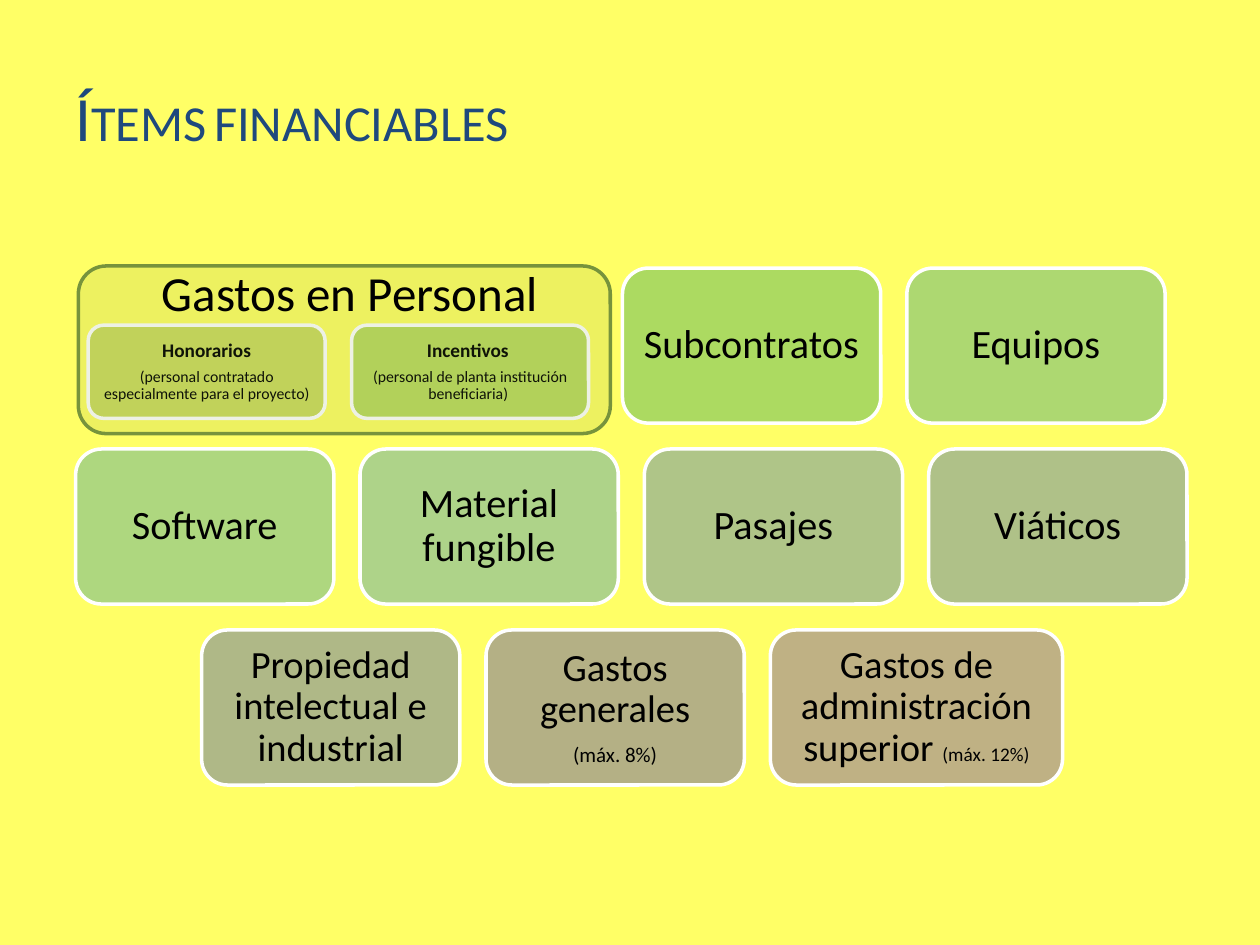
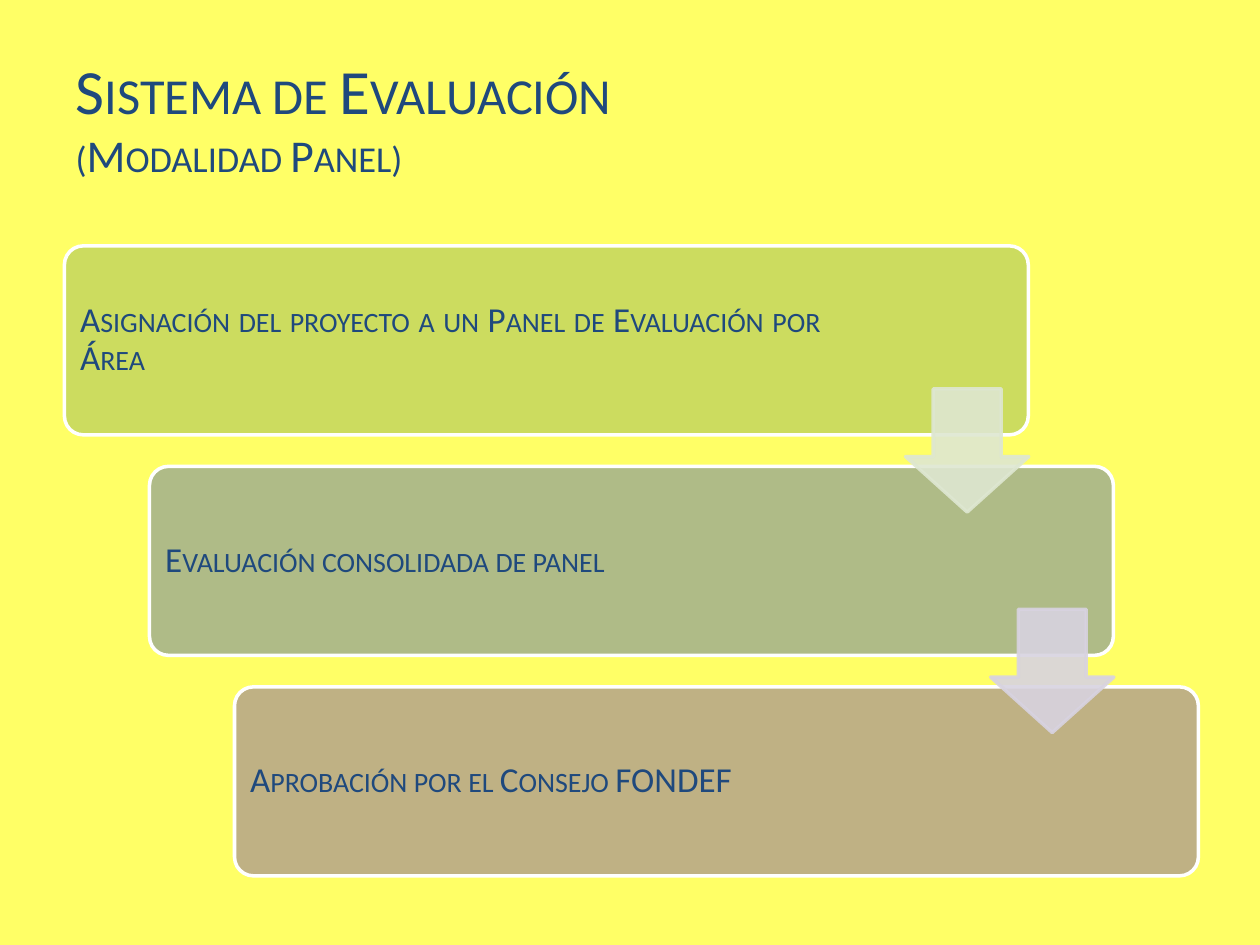
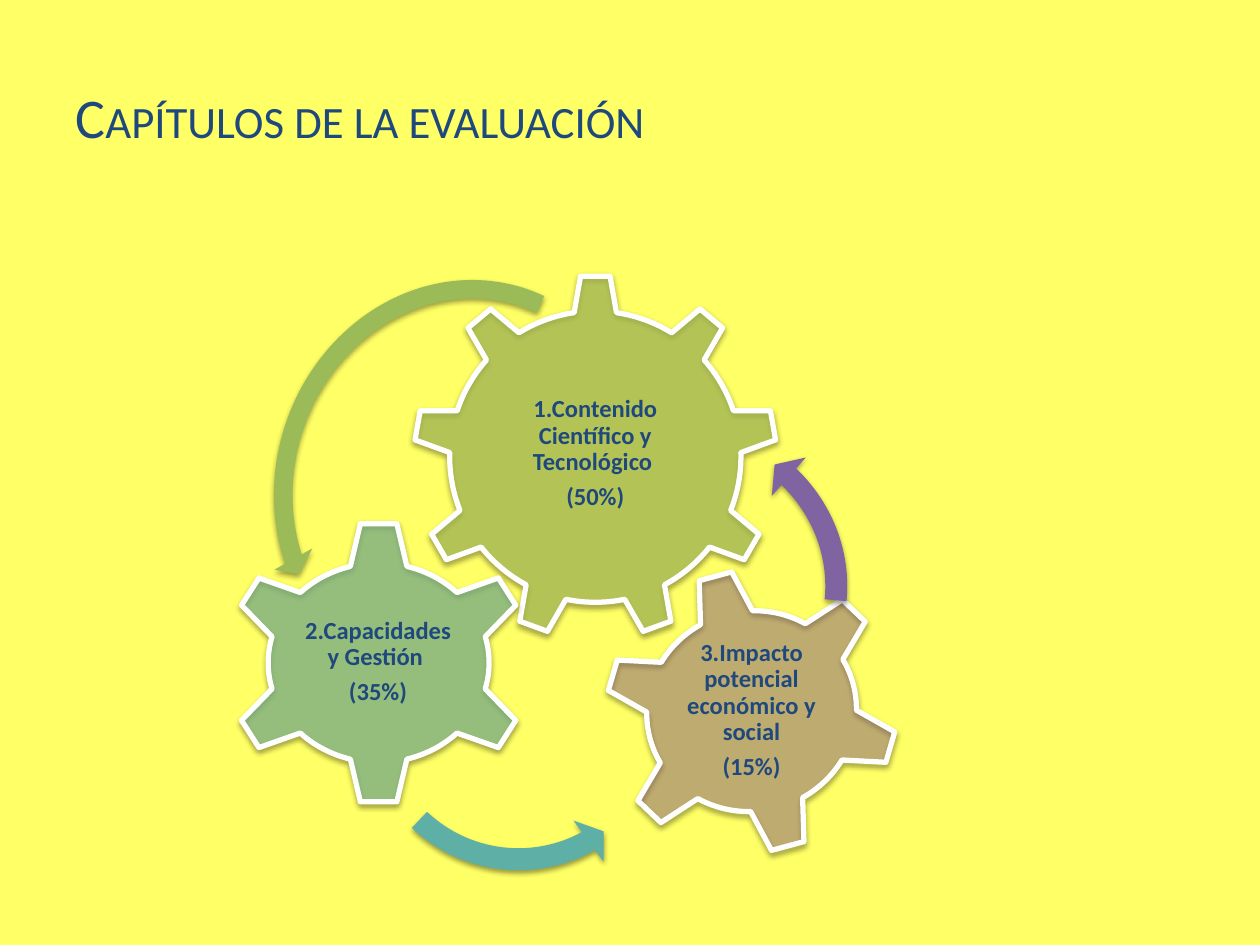
"""Build three slides on project funding items and evaluation."""
from dataclasses import dataclass
from typing import Optional

from lxml import etree
from pptx import Presentation
from pptx.dml.color import RGBColor
from pptx.enum import shapes, text
from pptx.oxml.ns import qn
from pptx.util import Pt

KIND = shapes.MSO_SHAPE
ALIGN = text.PP_ALIGN
ANCHOR = text.MSO_ANCHOR

YELLOW = RGBColor(0xFF, 0xFF, 0x66)
NAVY = RGBColor(0x1F, 0x49, 0x7D)
BLACK = RGBColor(0, 0, 0)
WHITE = RGBColor(0xFF, 0xFF, 0xFF)
GREEN = RGBColor(0x9B, 0xBB, 0x59)
LEAF = RGBColor(0x79, 0xB8, 0x5A)
MINT = RGBColor(0x5B, 0xB6, 0x5D)
JADE = RGBColor(0x5C, 0xB3, 0x7C)
SEA = RGBColor(0x5E, 0xB0, 0x99)
LAGOON = RGBColor(0x5F, 0xA8, 0xAD)
SKY = RGBColor(0x60, 0x8C, 0xAB)
STEEL = RGBColor(0x60, 0x84, 0xAA)
SLATE = RGBColor(0x61, 0x79, 0xA8)
INDIGO = RGBColor(0x61, 0x72, 0xA8)
VIOLET = RGBColor(0x6A, 0x63, 0xA5)
PURPLE = RGBColor(0x80, 0x64, 0xA2)
DEEP_PURPLE = RGBColor(0x70, 0x30, 0xA0)
TEAL = RGBColor(0x5E, 0xAF, 0xA6)
OLIVE = RGBColor(0x77, 0x93, 0x3C)
PALE_GREEN = RGBColor(0xDE, 0xE7, 0xD1)
PALE_PURPLE = RGBColor(0xD8, 0xD3, 0xE0)


@dataclass(frozen=True)
class Box:
    """Place and size in points."""
    left: float
    top: float
    width: float
    height: float

    def lengths(self):
        """Give the four values as lengths."""
        return [Pt(v) for v in (self.left, self.top, self.width, self.height)]


@dataclass(frozen=True)
class Figure:
    """A preset shape and its look."""
    kind: KIND
    box: Box
    fill: RGBColor
    opacity: int = 50
    line: Optional[RGBColor] = WHITE
    line_width: float = 2
    line_opacity: int = 100
    rotation: float = 0
    flipped: bool = False
    shadow: bool = False
    adjust: tuple = ()


@dataclass(frozen=True)
class Run:
    """A piece of text with its size."""
    text: str
    size: float
    bold: bool = False


@dataclass(frozen=True)
class Item:
    """A cost item shown as a card."""
    paragraphs: tuple
    fill: RGBColor
    width: float = 147.6


@dataclass(frozen=True)
class Chapter:
    """An evaluation chapter: a gear with its label."""
    gear: Figure
    label_box: Box
    label: str
    weight: str


def add_run(paragraph, words: str, *, size: float, color: RGBColor = BLACK,
            bold: bool = False, small_caps: bool = False, font: str = "Calibri"):
    """Add formatted text to a paragraph."""
    run = paragraph.add_run()
    run.text = words
    run.font.name, run.font.size, run.font.bold = font, Pt(size), bold
    run.font.color.rgb = color
    if small_caps:
        run.font._element.set("cap", "small")


def write(frame, paragraphs, *, insets, align=ALIGN.CENTER, anchor=ANCHOR.MIDDLE,
          line_spacing: float = 0.9, **look):
    """Fill a text frame; each paragraph is a tuple of runs."""
    frame.word_wrap = True
    frame.auto_size = text.MSO_AUTO_SIZE.NONE
    frame.vertical_anchor = anchor
    frame.margin_left, frame.margin_top, frame.margin_right, frame.margin_bottom = map(Pt, insets)
    for index, runs in enumerate(paragraphs):
        paragraph = frame.add_paragraph() if index else frame.paragraphs[0]
        paragraph.alignment = align
        paragraph.line_spacing = line_spacing
        if line_spacing < 1:
            paragraph.space_after = Pt(round(0.35 * runs[0].size, 1))
        for run in runs:
            add_run(paragraph, run.text, size=run.size, bold=run.bold, **look)


def set_opacity(fill_parent, percent: int) -> None:
    """Make a solid fill partly transparent."""
    color = fill_parent.find(qn("a:solidFill")).find(qn("a:srgbClr"))
    etree.SubElement(color, qn("a:alpha"), val=str(percent * 1000))


def add_shadow(shape) -> None:
    """Add a soft shadow just below a shape."""
    effects = shape.element.spPr.find(qn("a:effectLst"))
    shadow = etree.SubElement(effects, qn("a:outerShdw"), blurRad=str(Pt(3.1)),
                              dist=str(Pt(1.6)), dir="5400000", rotWithShape="0")
    color = etree.SubElement(shadow, qn("a:srgbClr"), val=str(BLACK))
    etree.SubElement(color, qn("a:alpha"), val="38000")


def draw(slide, figure: Figure):
    """Draw a figure and return its shape."""
    shape = slide.shapes.add_shape(figure.kind, *figure.box.lengths())
    for index, value in enumerate(figure.adjust):
        shape.adjustments[index] = value
    shape.rotation = figure.rotation
    shape.fill.solid()
    shape.fill.fore_color.rgb = figure.fill
    properties = shape.element.spPr
    if figure.opacity < 100:
        set_opacity(properties, figure.opacity)
    if figure.line is None:
        shape.line.fill.background()
    else:
        shape.line.color.rgb = figure.line
        shape.line.width = Pt(figure.line_width)
        if figure.line_opacity < 100:
            set_opacity(properties.find(qn("a:ln")), figure.line_opacity)
    if figure.flipped:
        properties.xfrm.set("flipH", "1")
    shape.shadow.inherit = False
    if figure.shadow:
        add_shadow(shape)
    return shape


def add_titled_slide(prs, *lines: Run):
    """Add a slide with a small-caps title, one paragraph a line."""
    slide = prs.slides.add_slide(prs.slide_layouts[5])
    title = slide.shapes.title
    title.left, title.top, title.width, title.height = Box(36, 21.6, 562.3, 90).lengths()
    write(title.text_frame, [(line,) for line in lines], insets=(7.2, 3.6, 7.2, 3.6),
          align=ALIGN.LEFT, line_spacing=1.0, color=NAVY, small_caps=True)
    return slide


def add_card(slide, box: Box, fill: RGBColor, paragraphs, inset: float) -> None:
    """Draw a translucent rounded card with centred text."""
    card = draw(slide, Figure(KIND.ROUNDED_RECTANGLE, box, fill))
    write(card.text_frame, paragraphs, insets=(inset,) * 4)


def build_items(prs) -> None:
    """Show the items that can be funded."""
    slide = add_titled_slide(prs, Run("Ítems", 36))
    title_line = slide.shapes.title.text_frame.paragraphs[0]
    add_run(title_line, " ", size=13, font="DejaVu Sans")
    add_run(title_line, "financiables", size=36, color=NAVY, small_caps=True)

    staff_costs = (
        ("Honorarios", "(personal contratado especialmente para el proyecto)", GREEN),
        ("Incentivos ", "(personal de planta institución beneficiaria) ", LEAF),
    )
    for column, (name, detail, fill) in enumerate(staff_costs):
        add_card(slide, Box(50.4 + 150.5 * column, 185.8, 135.4, 53.3), fill,
                 ((Run(name, 11, True),), (Run(detail, 9),)), 3.6)

    def plain(name: str, fill: RGBColor) -> Item:
        """Describe a card with one large label."""
        return Item(((Run(name, 23),),), fill)

    rows = (
        (355.7, (plain("Subcontratos", MINT), plain("Equipos", JADE))),
        (43.2, (plain("Software", SEA), plain("Material fungible", LAGOON),
                plain("Pasajes", SKY), plain("Viáticos", STEEL))),
        (115.2, (Item(((Run("Propiedad intelectual e industrial", 22),),), INDIGO),
                 Item(((Run("Gastos generales", 22),), (Run("(máx. 8%)", 12),)), VIOLET),
                 Item(((Run("Gastos de administración superior ", 22),
                        Run("(máx. 12%)", 11)),), PURPLE, 167))),
    )
    for row, (left, items) in enumerate(rows):
        for column, item in enumerate(items):
            box = Box(left + 162.5 * column, 153.2 + 103.4 * row, item.width, 88.6)
            add_card(slide, box, item.fill, item.paragraphs, 6.8)

    staff = draw(slide, Figure(KIND.ROUNDED_RECTANGLE, Box(44.8, 152, 304, 95.8),
                               OLIVE, opacity=13, line=OLIVE))
    write(staff.text_frame, ((Run("Gastos en Personal", 28),),),
          insets=(13.4, 0, 7.2, 66), line_spacing=1.0)


def build_system(prs) -> None:
    """Show the evaluation steps as a descending staircase."""
    slide = add_titled_slide(prs, Run("Sistema de Evaluación ", 36), Run("(Modalidad Panel)", 26))
    shift, drop = 48.6, 126
    steps = (
        ("Asignación del proyecto a un Panel de Evaluación por Área", GREEN, 115.6),
        ("Evaluación consolidada de panel", SLATE, 124.2),
        ("Aprobación por el Consejo FONDEF", PURPLE, 124.2),
    )
    for level, (name, fill, right_inset) in enumerate(steps):
        box = Box(36.8 + shift * level, 140.5 + drop * level, 550.8, 108)
        step = draw(slide, Figure(KIND.ROUNDED_RECTANGLE, box, fill, adjust=(0.1,)))
        write(step.text_frame, ((Run(name, 20),),), insets=(5.8, 5.8, right_inset, 5.8),
              align=ALIGN.JUSTIFY, color=NAVY, small_caps=True)
    for level, tint in enumerate((PALE_GREEN, PALE_PURPLE)):
        box = Box(517.5 + shift * level, 222.2 + drop * level, 70.4, 70.4)
        draw(slide, Figure(KIND.DOWN_ARROW, box, tint, opacity=90, line=tint,
                           line_opacity=90, adjust=(0.55, 0.45)))


def build_chapters(prs) -> None:
    """Show the evaluation chapters as linked gears."""
    slide = add_titled_slide(prs, Run("Capítulos de la evaluación", 32))

    def gear(kind: KIND, box: Box, fill: RGBColor, opacity: int = 50, rotation: float = 0) -> Figure:
        """Describe a gear with a white rim."""
        return Figure(kind, box, fill, opacity, line_width=3, rotation=rotation, shadow=True)

    def turn(kind: KIND, box: Box, fill: RGBColor, adjust: tuple,
             rotation: float = 0, flipped: bool = False) -> Figure:
        """Describe a curved arrow between gears."""
        return Figure(kind, box, fill, 100, line=None, rotation=rotation,
                      flipped=flipped, shadow=True, adjust=adjust)

    chapters = (
        Chapter(gear(KIND.GEAR_9, Box(236.2, 157, 208, 208), GREEN),
                Box(277.9, 205.9, 124.6, 106.6),
                "1.Contenido Científico y Tecnológico ", "(50%)"),
        Chapter(gear(KIND.GEAR_6, Box(128.9, 297.4, 175, 162.7), TEAL),
                Box(171.4, 338.4, 89.3, 79.9), "2.Capacidades y Gestión ", "(35%)"),
        Chapter(gear(KIND.GEAR_6, Box(344.9, 324.7, 169.2, 163.4), DEEP_PURPLE, 30, 345),
                Box(382.3, 360, 94.3, 92.2), "3.Impacto potencial económico y social", "(15%)"),
    )
    for chapter in chapters:
        draw(slide, chapter.gear)
        label = slide.shapes.add_textbox(*chapter.label_box.lengths())
        write(label.text_frame, ((Run(chapter.label, 14, True),), (Run(chapter.weight, 14, True),)),
              insets=(1.4,) * 4, color=NAVY)

    turns = (
        turn(KIND.CIRCULAR_ARROW, Box(150.5, 151.9, 226.1, 248.4), GREEN,
             (0.047, 2.99, 25.29, 158.34, 0.055), 17.8, True),
        turn(KIND.LEFT_CIRCULAR_ARROW, Box(199.4, 311.8, 193.7, 193.7), TEAL,
             (0.065, 4.3, 104.89, 148.38, 0.075), 246.1),
        turn(KIND.CIRCULAR_ARROW, Box(270, 230.4, 222.5, 208.8), PURPLE,
             (0.06, 3.94, 133.14, 105.08, 0.07), 0, True),
    )
    for arrow in turns:
        draw(slide, arrow)


def main() -> None:
    """Build and save the presentation."""
    prs = Presentation()
    prs.slide_width, prs.slide_height = Pt(720), Pt(540)
    backdrop = prs.slide_master.background.fill
    backdrop.solid()
    backdrop.fore_color.rgb = YELLOW
    build_items(prs)
    build_system(prs)
    build_chapters(prs)
    prs.save("out.pptx")


if __name__ == "__main__":
    main()
